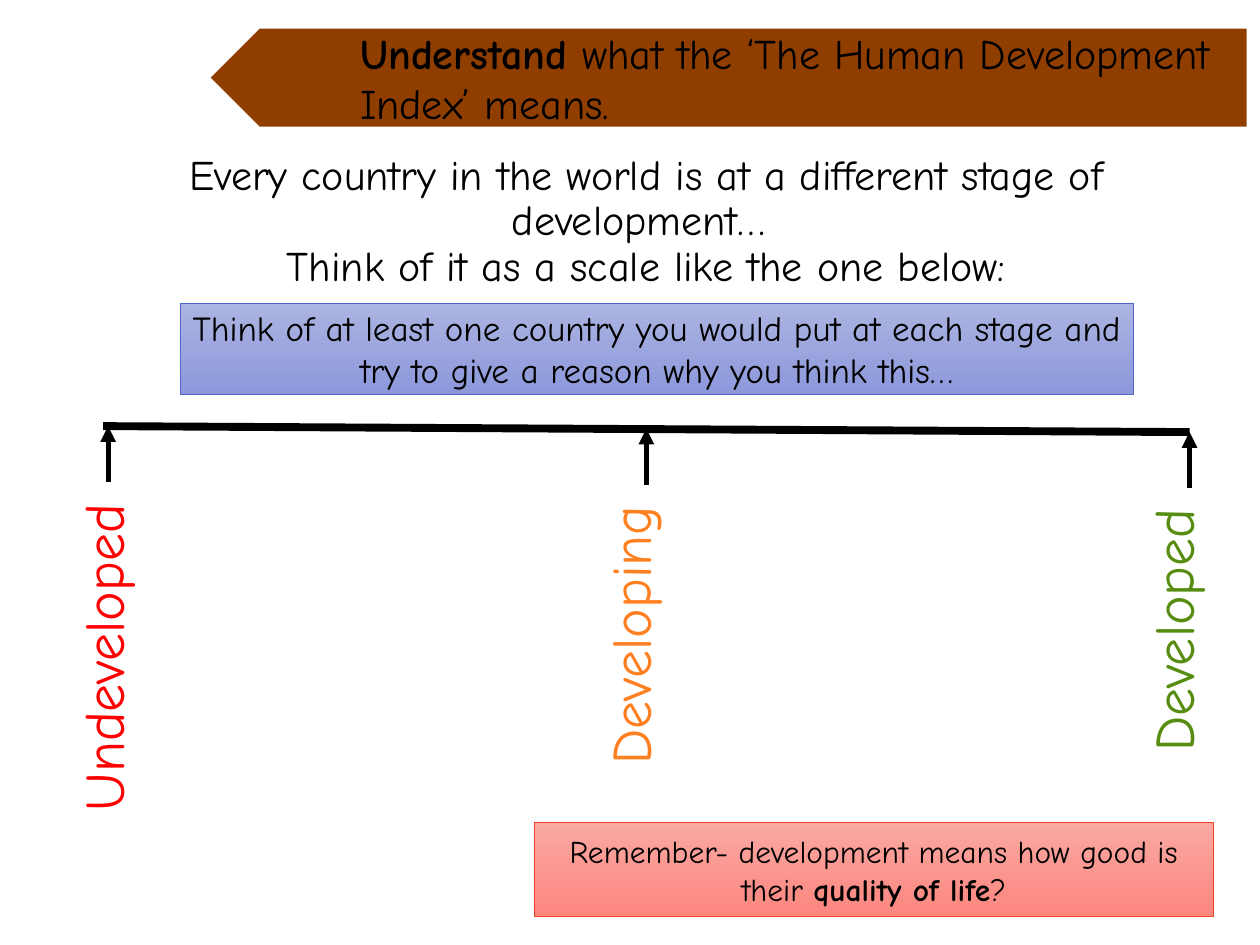
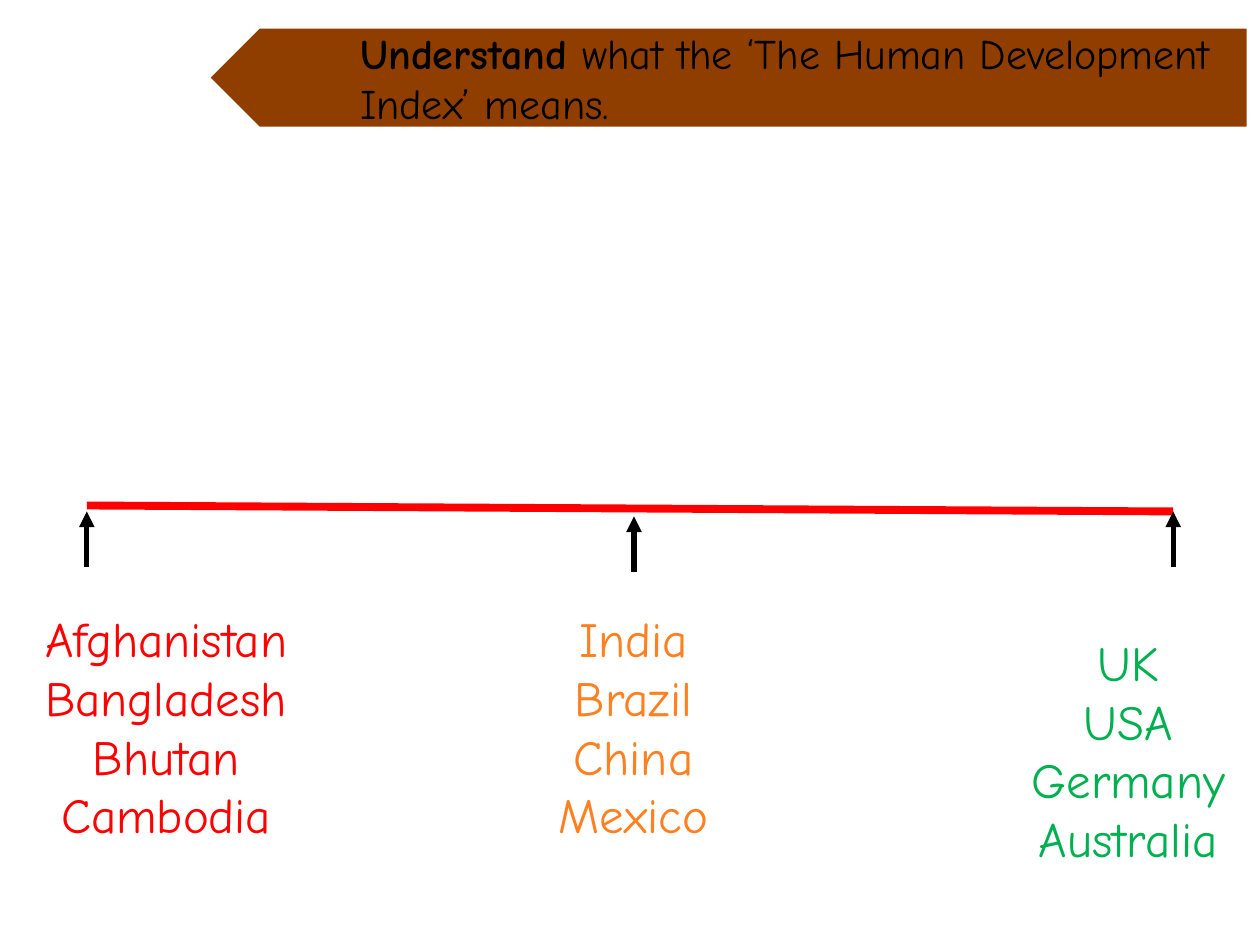
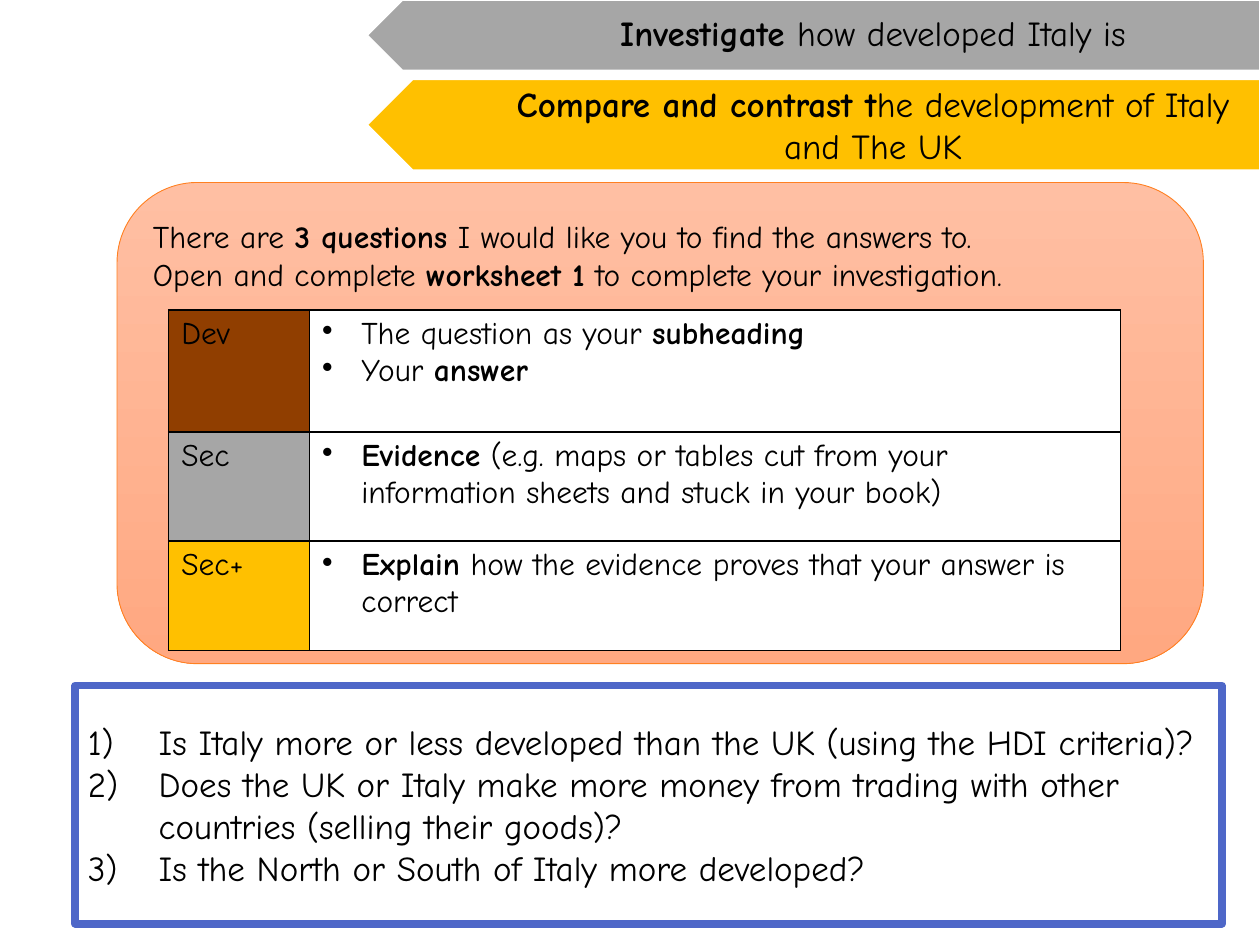
from dataclasses import dataclass

from lxml import etree
from pptx import Presentation
from pptx.dml.color import RGBColor
from pptx.enum.shapes import MSO_CONNECTOR, MSO_SHAPE
from pptx.enum.text import MSO_ANCHOR, PP_ALIGN
from pptx.oxml.ns import qn
from pptx.util import Cm, Pt


@dataclass(frozen=True)
class Theme:
    font: str = "Comic Neue"
    ink: str = "000000"
    paper: str = "FFFFFF"
    bronze: str = "903E00"
    silver: str = "A6A6A6"
    gold: str = "FFC000"
    red: str = "FF0000"
    orange: str = "FF8021"
    olive: str = "568D11"
    green: str = "00B050"
    blue: str = "4E67C8"
    vermilion: str = "F14124"
    blue_fade: tuple = ("ACB4E2", "8C98DA")
    red_fade: tuple = ("FAA8A2", "FB877F")
    orange_fade: tuple = ("FFBFA3", "FFA881")
    stage_size: int = 32
    country_size: int = 28
    title_size: int = 24
    prompt_size: int = 20
    note_size: int = 18


THEME = Theme()
CENTER, LEFT = PP_ALIGN.CENTER, PP_ALIGN.LEFT
OBJECTIVE = "*Understand *what the ‘The Human Development Index’ means."


def rgb(value):
    return RGBColor.from_string(value)


def write(frame, lines, size, colour=THEME.ink, align=CENTER, spacing=None,
          marker=None, indent=0):
    """Fill a text frame; *asterisks* enclose bold words, marker is a bullet element."""
    for index, line in enumerate(lines):
        paragraph = frame.paragraphs[0] if index == 0 else frame.add_paragraph()
        paragraph.alignment = align
        if spacing:
            paragraph.line_spacing = spacing
        if marker:
            tag, attributes = marker
            properties = paragraph._p.get_or_add_pPr()
            properties.set("marL", str(Cm(indent)))
            properties.set("indent", str(-Cm(indent)))
            etree.SubElement(properties, qn(tag), attributes)
        font = paragraph.font
        font.name, font.size = THEME.font, Pt(size)
        font.color.rgb = rgb(colour)
        for part, words in enumerate(line.split("*")):
            if not words:
                continue
            if "\v" in words:
                before, after = words.split("\v")
                paragraph.add_run().text = before
                paragraph.add_line_break()
                paragraph.add_run().text = after
                continue
            run = paragraph.add_run()
            run.text = words
            if part % 2:
                run.font.bold = True


def add_text(shapes, box, lines, size, wrap=True, anchor=MSO_ANCHOR.TOP,
             insets=None, **style):
    label = shapes.add_textbox(*map(Cm, box))
    frame = label.text_frame
    frame.word_wrap = wrap
    frame.vertical_anchor = anchor
    if insets:
        (frame.margin_left, frame.margin_top,
         frame.margin_right, frame.margin_bottom) = map(Cm, insets)
    write(frame, lines, size, **style)
    return label


def add_panel(shapes, kind, box, fill, line, width):
    """Draw an outlined shape; a pair of fill colours fades from top to bottom."""
    panel = shapes.add_shape(kind, *map(Cm, box))
    panel.shadow.inherit = False
    if isinstance(fill, tuple):
        panel.fill.gradient()
        panel.fill.gradient_angle = 270
        for stop, colour in zip(panel.fill.gradient_stops, fill):
            stop.color.rgb = rgb(colour)
    else:
        panel.fill.solid()
        panel.fill.fore_color.rgb = rgb(fill)
    panel.line.color.rgb = rgb(line)
    panel.line.width = Pt(width)
    panel.text_frame.word_wrap = True
    panel.text_frame.vertical_anchor = MSO_ANCHOR.MIDDLE
    return panel


def add_banner(slide, box, text_left, fill, text, size, **style):
    """Group a left-pointing band with its learning objective."""
    left, top, width, height = box
    shapes = slide.shapes.add_group_shape().shapes
    band = add_panel(shapes, MSO_SHAPE.PENTAGON, box, fill, THEME.paper, 1)
    band.rotation = 180
    add_text(shapes, (text_left, top, left + width - text_left, height), [text], size,
             anchor=MSO_ANCHOR.MIDDLE, insets=(1.7, 0.25, 0.46, 0.25), **style)


def add_objective(slide):
    add_banner(slide, (4.22, 0.56, 20.93, 2.01), 5.56, THEME.bronze, OBJECTIVE,
               THEME.title_size, align=LEFT)


def add_line(slide, start, end, colour, width, arrow=False):
    line = slide.shapes.add_connector(MSO_CONNECTOR.STRAIGHT, *map(Cm, start + end))
    line.line.color.rgb = rgb(colour)
    line.line.width = Pt(width)
    if arrow:
        etree.SubElement(line.line._get_or_add_ln(), qn("a:tailEnd"), type="triangle")
    etree.SubElement(line._element.spPr, qn("a:effectLst"))


def add_scale(slide, start, end, colour, pointer_tips):
    add_line(slide, start, end, colour, 4.5)
    for x, y in pointer_tips:
        add_line(slide, (x, y + 1.13), (x, y), THEME.ink, 3, arrow=True)


def add_stage(slide, name, centre, width, colour):
    """Write a stage name running upwards around its centre."""
    x, y = centre
    height = 1.63
    stage = add_text(slide.shapes, (x - width / 2, y - height / 2, width, height),
                     [name], THEME.stage_size, wrap=False, colour=colour)
    stage.rotation = 270


def add_border(cell):
    properties = cell._tc.get_or_add_tcPr()
    for side in ("a:lnL", "a:lnR", "a:lnT", "a:lnB"):
        edge = etree.SubElement(properties, qn(side), w=str(Pt(1)))
        paint = etree.SubElement(edge, qn("a:solidFill"))
        etree.SubElement(paint, qn("a:srgbClr"), val=THEME.ink)


def add_criteria(slide, levels):
    widths, heights = (2.84, 16.35), (2.46, 2.2, 2.2)
    table = slide.shapes.add_table(len(levels), 2, Cm(3.4), Cm(6.25),
                                   Cm(sum(widths)), Cm(sum(heights))).table
    table.first_row = table.horz_banding = False
    for column, width in zip(table.columns, widths):
        column.width = Cm(width)
    for row, height, (level, fill, tasks) in zip(table.rows, heights, levels):
        row.height = Cm(height)
        level_cell, task_cell = row.cells
        for cell, colour in ((level_cell, fill), (task_cell, THEME.paper)):
            add_border(cell)
            cell.fill.solid()
            cell.fill.fore_color.rgb = rgb(colour)
        write(level_cell.text_frame, [level], THEME.note_size, align=LEFT)
        write(task_cell.text_frame, tasks, THEME.note_size, align=LEFT,
              marker=("a:buChar", {"char": "•"}), indent=0.79)


def build_stages(slide):
    add_text(slide.shapes, (0.97, 2.64, 24.1, 3.68),
             ["Every country in the world is at a different stage of development… "
              "\vThink of it as a scale like the one below:"],
             THEME.title_size, anchor=MSO_ANCHOR.MIDDLE, spacing=0.9)
    add_scale(slide, (2.08, 8.59), (23.98, 8.71), THEME.ink,
              [(2.18, 8.59), (13.03, 8.64), (23.98, 8.71)])
    add_stage(slide, "Undeveloped", (2.07, 13.26), 7.24, THEME.red)
    add_stage(slide, "Developing", (12.7, 12.8), 6.2, THEME.orange)
    add_stage(slide, "Developed", (23.65, 12.7), 5.94, THEME.olive)
    prompt = add_panel(slide.shapes, MSO_SHAPE.RECTANGLE, (3.63, 6.12, 19.23, 1.83),
                       THEME.blue_fade, THEME.blue, 0.5)
    write(prompt.text_frame,
          ["Think of at least one country you would put at each stage and try to "
           "give a reason why you think this…"], THEME.prompt_size)
    reminder = add_panel(slide.shapes, MSO_SHAPE.RECTANGLE, (10.77, 16.59, 13.69, 1.88),
                         THEME.red_fade, THEME.vermilion, 0.5)
    write(reminder.text_frame,
          ["Remember- development means how good is their *quality of life*?"],
          THEME.note_size)
    add_objective(slide)


def build_examples(slide):
    add_scale(slide, (1.75, 10.19), (23.65, 10.31), THEME.red,
              [(1.75, 10.31), (12.78, 10.41), (23.65, 10.31)])
    examples = [
        (-3, 12.14, 12.7, THEME.red, ["Afghanistan", "Bangladesh", "Bhutan", "Cambodia"]),
        (10.85, 12.14, 3.84, THEME.orange, ["India", "Brazil", "China", "Mexico"]),
        (20.09, 12.62, 5.31, THEME.green, ["UK", "USA", "Germany", "Australia"]),
    ]
    for left, top, width, colour, countries in examples:
        add_text(slide.shapes, (left, top, width, 5.05), countries,
                 THEME.country_size, wrap=False, colour=colour)
    add_objective(slide)


def build_investigation(slide):
    task = add_panel(slide.shapes, MSO_SHAPE.ROUNDED_RECTANGLE, (2.36, 3.68, 21.9, 9.7),
                     THEME.orange_fade, THEME.orange, 0.5)
    task.text_frame.vertical_anchor = MSO_ANCHOR.TOP
    task.text_frame.margin_top = Cm(0.23)
    write(task.text_frame,
          ["There are *3 questions* I would like you to find the answers to.",
           "Open and complete *worksheet 1* to complete your investigation."],
          THEME.note_size, align=LEFT)
    add_criteria(slide, [
        ("Dev", THEME.bronze, ["The question as your *subheading*", "Your *answer*"]),
        ("Sec", THEME.silver, ["*Evidence* (e.g. maps or tables cut from your "
                               "information sheets and stuck in your book)"]),
        ("Sec+", THEME.gold, ["*Explain* how the evidence proves that your answer "
                              "is correct"]),
    ])
    questions = add_panel(slide.shapes, MSO_SHAPE.RECTANGLE, (1.52, 13.82, 23.11, 4.8),
                          THEME.paper, THEME.blue, 4.5)
    write(questions.text_frame,
          ["Is Italy more or less developed than the UK (using the HDI criteria)?",
           "Does the UK or Italy make more money from trading with other countries "
           "(selling their goods)?",
           "Is the North or South of Italy more developed?"],
          THEME.prompt_size, align=LEFT,
          marker=("a:buAutoNum", {"type": "arabicParenR"}), indent=1.43)
    add_banner(slide, (7.4, 0, 18, 1.42), 8.56, THEME.silver,
               "*Investigate *how developed Italy is", THEME.prompt_size, spacing=0.9)
    add_banner(slide, (7.4, 1.6, 18, 1.83), 8.56, THEME.gold,
               "*Compare and contrast t*he development of Italy and The UK",
               THEME.prompt_size)


def main():
    deck = Presentation()
    deck.slide_width, deck.slide_height = Cm(25.4), Cm(19.05)
    blank = deck.slide_layouts[6]
    for build in (build_stages, build_examples, build_investigation):
        build(deck.slides.add_slide(blank))
    deck.save("out.pptx")


if __name__ == "__main__":
    main()
